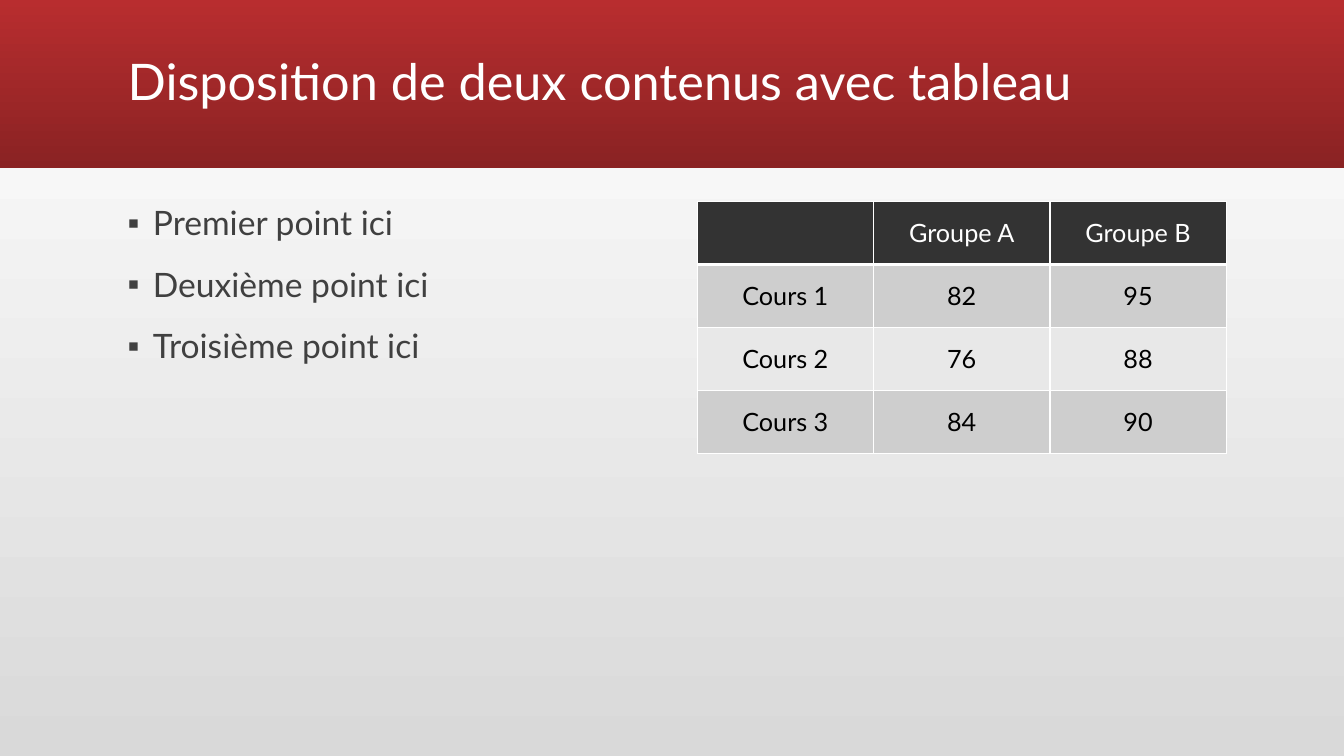
from lxml.etree import SubElement
from pptx import Presentation
from pptx.dml.color import RGBColor
from pptx.enum.shapes import MSO_SHAPE
from pptx.enum.text import MSO_ANCHOR, MSO_AUTO_SIZE, PP_ALIGN
from pptx.oxml.ns import qn
from pptx.util import Inches, Pt

COLORS = {
    "white": "FFFFFF",
    "black": "000000",
    "text": "404040",
    "red": "B82D2F",
    "dark red": "8A2223",
    "background": "D9D9D9",
    "header": "333333",
    "odd row": "CECECE",
    "even row": "E8E8E8",
}
FONT = "Lato"
COLUMNS, ROWS = 160, 90  # slide grid

POINTS = ["Premier point ici", "Deuxième point ici", "Troisième point ici"]
SCORES = [
    ["", "Groupe A", "Groupe B"],
    ["Cours 1", "82", "95"],
    ["Cours 2", "76", "88"],
    ["Cours 3", "84", "90"],
]


def rgb(name):
    return RGBColor.from_string(COLORS[name])


def write(paragraph, text, size=18, color="black", align=PP_ALIGN.LEFT,
          line_spacing=None, space_before=None):
    """Put formatted text into a paragraph."""
    paragraph.alignment = align
    if line_spacing is not None:
        paragraph.line_spacing = line_spacing
    if space_before is not None:
        paragraph.space_before = Pt(space_before)
    run = paragraph.add_run()
    run.text = text
    run.font.name = FONT
    run.font.size = Pt(size)
    run.font.color.rgb = rgb(color)


class SlideBuilder:
    """Holds the slide and its grid, and draws each kind of element."""

    def __init__(self, presentation):
        self.column = presentation.slide_width / COLUMNS
        self.row = presentation.slide_height / ROWS
        self.slide = presentation.slides.add_slide(presentation.slide_layouts[1])

    def box(self, left, top, width, height):
        return (round(left * self.column), round(top * self.row),
                round(width * self.column), round(height * self.row))

    def gradient(self, fill, first, last, angle):
        fill.gradient()
        fill.gradient_angle = angle
        for stop, name in zip(fill.gradient_stops, (first, last)):
            stop.color.rgb = rgb(name)

    def background(self):
        self.gradient(self.slide.background.fill, "background", "white", 90)

    def band(self, *area):
        shape = self.slide.shapes.add_shape(MSO_SHAPE.RECTANGLE, *self.box(*area))
        shape.shadow.inherit = False
        shape.line.fill.background()
        self.gradient(shape.fill, "red", "dark red", 270)
        # Send behind the placeholders
        self.slide.shapes._spTree.insert(2, shape._element)

    def place(self, shape, area, anchor):
        shape.left, shape.top, shape.width, shape.height = self.box(*area)
        frame = shape.text_frame
        frame.word_wrap = True
        frame.auto_size = MSO_AUTO_SIZE.NONE
        frame.vertical_anchor = anchor
        return frame

    def title(self, text, *area):
        frame = self.place(self.slide.shapes.title, area, MSO_ANCHOR.MIDDLE)
        write(frame.paragraphs[0], text, size=36, color="white", line_spacing=0.9)

    def bullets(self, points, *area):
        frame = self.place(self.slide.placeholders[1], area, MSO_ANCHOR.TOP)
        for index, point in enumerate(points):
            paragraph = frame.add_paragraph() if index else frame.paragraphs[0]
            write(paragraph, point, size=24, color="text",
                  line_spacing=0.9, space_before=18)
            properties = paragraph._p.get_or_add_pPr()
            properties.set("marL", str(Inches(0.25)))
            properties.set("indent", str(-Inches(0.25)))
            SubElement(properties, qn("a:buFont"), typeface="Arial")
            SubElement(properties, qn("a:buChar"), char="▪")

    def borders(self, cell, **widths):
        properties = cell._tc.get_or_add_tcPr()
        for side in "LRTB":
            line = SubElement(properties, qn(f"a:ln{side}"),
                              w=str(Pt(widths.get(side, 1))))
            fill = SubElement(line, qn("a:solidFill"))
            SubElement(fill, qn("a:srgbClr"), val=COLORS["white"])

    def table(self, values, *area):
        shape = self.slide.shapes.add_table(
            len(values), len(values[0]), *self.box(*area))
        for row_index, row in enumerate(values):
            is_header = row_index == 0
            if is_header:
                fill, color, widths = "header", "white", {"B": 3}
            else:
                fill = "odd row" if row_index % 2 else "even row"
                color, widths = "black", {"T": 3} if row_index == 1 else {}
            for column_index, text in enumerate(row):
                cell = shape.table.cell(row_index, column_index)
                cell.vertical_anchor = MSO_ANCHOR.MIDDLE
                self.borders(cell, **widths)
                cell.fill.solid()
                cell.fill.fore_color.rgb = rgb(fill)
                if text:
                    write(cell.text_frame.paragraphs[0], text, color=color,
                          align=PP_ALIGN.CENTER)


def main():
    presentation = Presentation()
    presentation.slide_width = Inches(13.33)
    presentation.slide_height = Inches(7.5)
    builder = SlideBuilder(presentation)

    # Backdrop and title band
    builder.background()
    builder.band(0, 0, COLUMNS, 20)
    builder.title("Disposition de deux contenus avec tableau", 14, 1.3, 132, 17.4)

    # Two contents side by side
    builder.bullets(POINTS, 14, 24, 63, 60)
    builder.table(SCORES, 83, 24, 63, 30)

    presentation.save("out.pptx")


if __name__ == "__main__":
    main()
